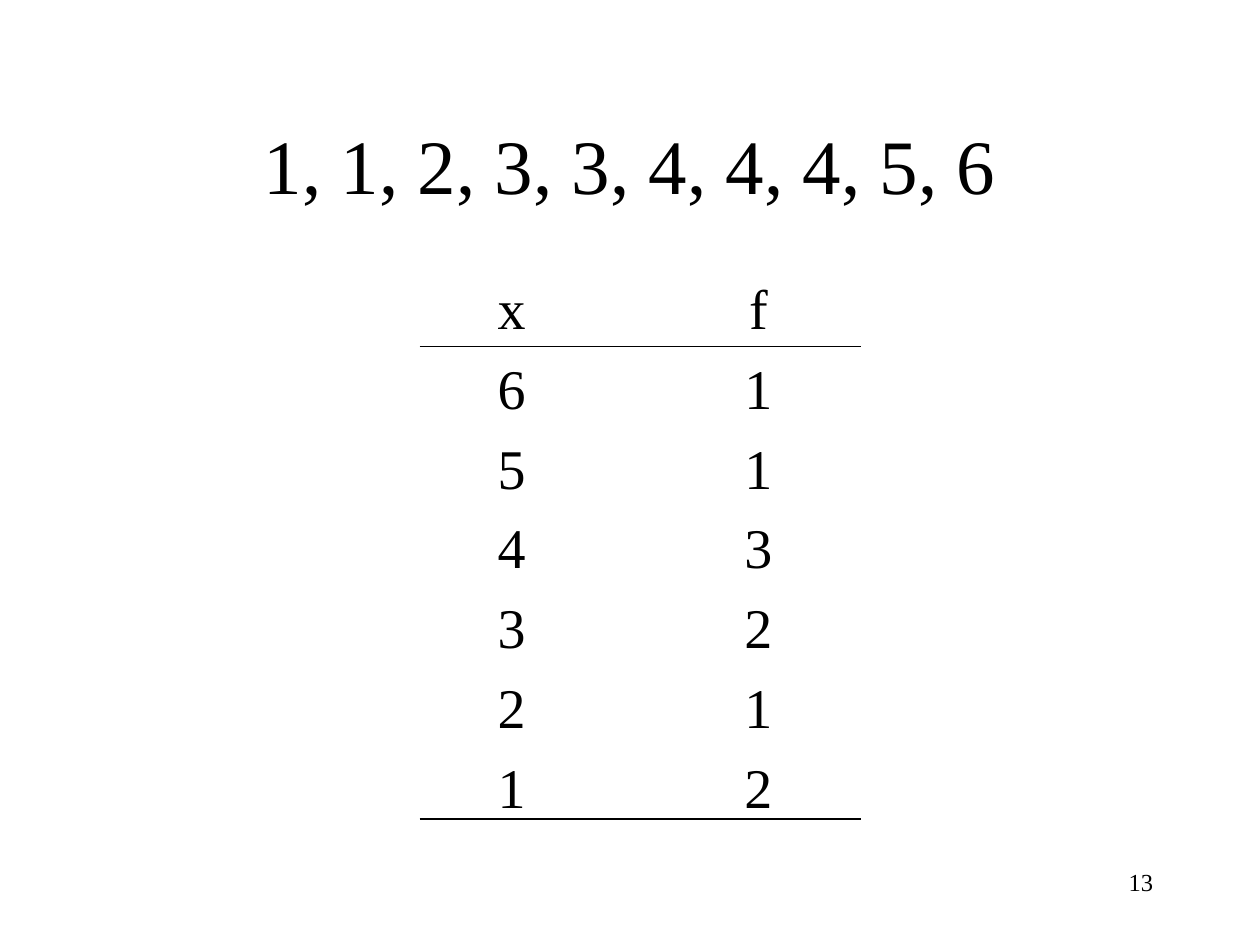
"""Build a slide that tallies a list of scores in a frequency table."""
from dataclasses import dataclass

from lxml import etree
from pptx import Presentation
from pptx import util as u
from pptx.dml.color import RGBColor
from pptx.enum import shapes, text
from pptx.oxml import ns

BLACK = RGBColor(0, 0, 0)
FONT = "Times New Roman"


@dataclass(frozen=True)
class Label:
    words: str
    left: float
    top: float
    width: float
    height: float
    size: int
    align: text.PP_ALIGN
    anchor: text.MSO_ANCHOR


SCORES = [1, 1, 2, 3, 3, 4, 4, 4, 5, 6]
LABELS = [
    Label(", ".join(map(str, SCORES)), 0.75, 0.67, 8.5, 1.25, 44,
          text.PP_ALIGN.CENTER, text.MSO_ANCHOR.MIDDLE),
    Label("13", 7.17, 6.83, 2.08, 0.5, 14,
          text.PP_ALIGN.RIGHT, text.MSO_ANCHOR.TOP),
]
RULE_LEFT, RULE_RIGHT = 3.33, 6.83
RULE_HEIGHTS = [2.75, 6.5]


def write(frame, words: str, size: int, align: text.PP_ALIGN) -> None:
    frame.text = words
    para = frame.paragraphs[0]
    para.alignment = align
    for span in para.runs:
        span.font.name = FONT
        span.font.size = u.Pt(size)
        span.font.color.rgb = BLACK


def add_label(page, label: Label) -> None:
    box = page.shapes.add_textbox(u.Inches(label.left), u.Inches(label.top),
                                  u.Inches(label.width), u.Inches(label.height))
    box.text_frame.word_wrap = True
    box.text_frame.vertical_anchor = label.anchor
    write(box.text_frame, label.words, label.size, label.align)


def add_frequency_table(page) -> None:
    counts = [(score, SCORES.count(score)) for score in sorted(set(SCORES), reverse=True)]
    rows = [("x", "f"), *counts]
    frame = page.shapes.add_table(len(rows), 2, u.Inches(3.08), u.Inches(2.17),
                                  u.Inches(3.92), u.Inches(4.43))
    table = frame.table
    table.first_row = table.horz_banding = False
    style = table._tbl.tblPr.find(ns.qn("a:tableStyleId"))
    style.text = "{2D5ABB26-0587-4C30-8999-92F81FD0307C}"
    for row, values in enumerate(rows):
        for column, value in enumerate(values):
            cell = table.cell(row, column)
            cell.fill.background()
            write(cell.text_frame, str(value), 32, text.PP_ALIGN.CENTER)


def add_rule(page, height: float) -> None:
    rule = page.shapes.add_connector(
        shapes.MSO_CONNECTOR.STRAIGHT, u.Inches(RULE_LEFT), u.Inches(height),
        u.Inches(RULE_RIGHT), u.Inches(height))
    rule.line.color.rgb = BLACK
    rule.line.width = u.Pt(0.75)
    etree.SubElement(rule._element.spPr, ns.qn("a:effectLst"))


def main() -> None:
    deck = Presentation()
    deck.slide_width, deck.slide_height = u.Inches(10), u.Inches(7.5)
    page = deck.slides.add_slide(deck.slide_layouts[6])
    add_frequency_table(page)
    for height in RULE_HEIGHTS:
        add_rule(page, height)
    for label in LABELS:
        add_label(page, label)
    deck.save("out.pptx")


if __name__ == "__main__":
    main()
